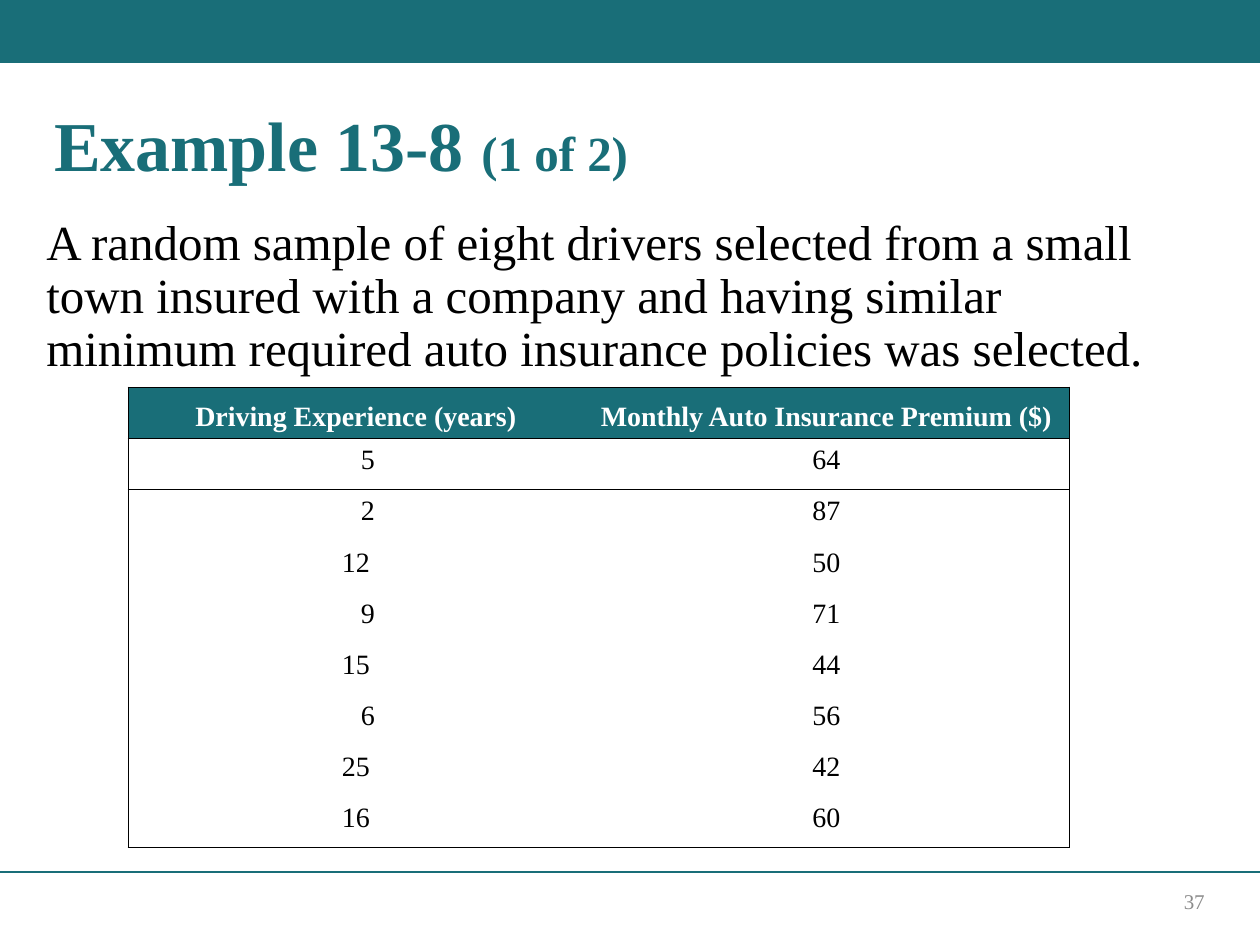
import pptx
import pptx.util
import pptx.dml.color
import pptx.enum.shapes
import pptx.enum.text
import pptx.oxml
import pptx.oxml.ns
from dataclasses import dataclass

Pt = pptx.util.Pt
Align = pptx.enum.text.PP_ALIGN
Anchor = pptx.enum.text.MSO_ANCHOR


@dataclass(frozen=True)
class Theme:
    font: str = "Times New Roman"
    teal: str = "196E78"
    black: str = "000000"
    white: str = "FFFFFF"
    gray: str = "8C8C8C"
    title: int = 40
    body: int = 28
    cell: int = 16
    foot: int = 12


THEME = Theme()
HEADS = ("Driving Experience (years)", "Monthly Auto Insurance Premium ($)")
DATA = [(5, 64), (2, 87), (12, 50), (9, 71), (15, 44), (6, 56), (25, 42), (16, 60)]


def color(code):
    return pptx.dml.color.RGBColor.from_string(code)


def write(frame, text, size, ink=THEME.black, bold=False, align=Align.LEFT,
          space=None, indent=0):
    """Add a run to the first paragraph of the frame."""
    para = frame.paragraphs[0]
    para.alignment = align
    if space:
        para.line_spacing = space
    if indent:
        para._p.get_or_add_pPr().set("indent", str(Pt(indent)))
    run = para.add_run()
    run.text = text
    run.font.name = THEME.font
    run.font.size = Pt(size)
    run.font.bold = bold
    run.font.color.rgb = color(ink)


def add_box(slide, box, anchor=Anchor.TOP):
    frame = slide.shapes.add_textbox(*map(Pt, box)).text_frame
    frame.word_wrap = True
    frame.vertical_anchor = anchor
    return frame


def add_band(slide, box):
    band = slide.shapes.add_shape(pptx.enum.shapes.MSO_SHAPE.RECTANGLE, *map(Pt, box))
    band.shadow.inherit = False
    band.fill.solid()
    band.fill.fore_color.rgb = color(THEME.teal)
    band.line.fill.background()


def add_title(slide, box):
    frame = add_box(slide, box)
    for text, size in (("Example 13-8 ", THEME.title), ("(1 of 2)", THEME.body)):
        write(frame, text, size, ink=THEME.teal, bold=True, space=0.9)


def add_body(slide, box):
    write(add_box(slide, box),
          "A random sample of eight drivers selected from a small town insured "
          "with a company and having similar minimum required auto insurance "
          "policies was selected.", THEME.body, space=0.9)


def add_foot(slide, box):
    """Draw the rule along the top of the box and the page number inside it."""
    left, top, width, height = box
    rule = slide.shapes.add_connector(pptx.enum.shapes.MSO_CONNECTOR.STRAIGHT,
                                      Pt(left), Pt(top), Pt(left + width), Pt(top))
    rule.line.color.rgb = color(THEME.teal)
    rule.line.width = Pt(1)
    rule._element.spPr.append(pptx.oxml.parse_xml(
        f"<a:effectLst {pptx.oxml.ns.nsdecls('a')}/>"))
    frame = add_box(slide, (left + width - 211.7, top + 2.2, 187.2, 28.8), Anchor.MIDDLE)
    write(frame, "37", THEME.foot, ink=THEME.gray, align=Align.RIGHT)


def set_edges(cell, sides):
    """Line the given sides (of L, R, T, B) and clear the others."""
    props = cell._tc.get_or_add_tcPr()
    for spot, side in enumerate("LRTB"):
        fill = (f'<a:solidFill><a:srgbClr val="{THEME.black}"/></a:solidFill>'
                if side in sides else "<a:noFill/>")
        props.insert(spot, pptx.oxml.parse_xml(
            f'<a:ln{side} {pptx.oxml.ns.nsdecls("a")} w="{Pt(1)}">{fill}</a:ln{side}>'))


def add_grid(slide, box, widths):
    rows = [HEADS] + DATA
    last = len(rows) - 1
    table = slide.shapes.add_table(len(rows), len(widths), *map(Pt, box)).table
    table.first_row = table.horz_banding = False
    for col, width in zip(table.columns, widths):
        col.width = Pt(width)
    for r, row in enumerate(rows):
        table.rows[r].height = Pt(box[3] / len(rows))
        head = r == 0
        for c, value in enumerate(row):
            cell = table.cell(r, c)
            if head:
                cell.fill.solid()
                cell.fill.fore_color.rgb = color(THEME.teal)
            else:
                cell.fill.background()
            cell.vertical_anchor = Anchor.BOTTOM if head else Anchor.TOP
            short = c == 0 and len(str(value)) == 1
            write(cell.text_frame, str(value), THEME.cell, bold=head,
                  ink=THEME.white if head else THEME.black,
                  align=Align.CENTER, indent=13.7 if short else 0)
            sides = "LR"[c]
            if r <= 2:
                sides += "T"
            if r in (0, 1, last):
                sides += "B"
            set_edges(cell, sides)


def main():
    deck = pptx.Presentation()
    deck.slide_width, deck.slide_height = Pt(720), Pt(540)
    slide = deck.slides.add_slide(deck.slide_layouts[6])
    add_band(slide, (0, 0, 720, 36))
    add_body(slide, (19.4, 121, 671.8, 107.3))
    add_foot(slide, (0, 498.2, 720, 41.8))
    add_title(slide, (23.8, 59.8, 671.8, 66.2))
    add_grid(slide, (73.4, 221.4, 537.8, 262.8), (259.9, 277.9))
    deck.save("out.pptx")


if __name__ == "__main__":
    main()
